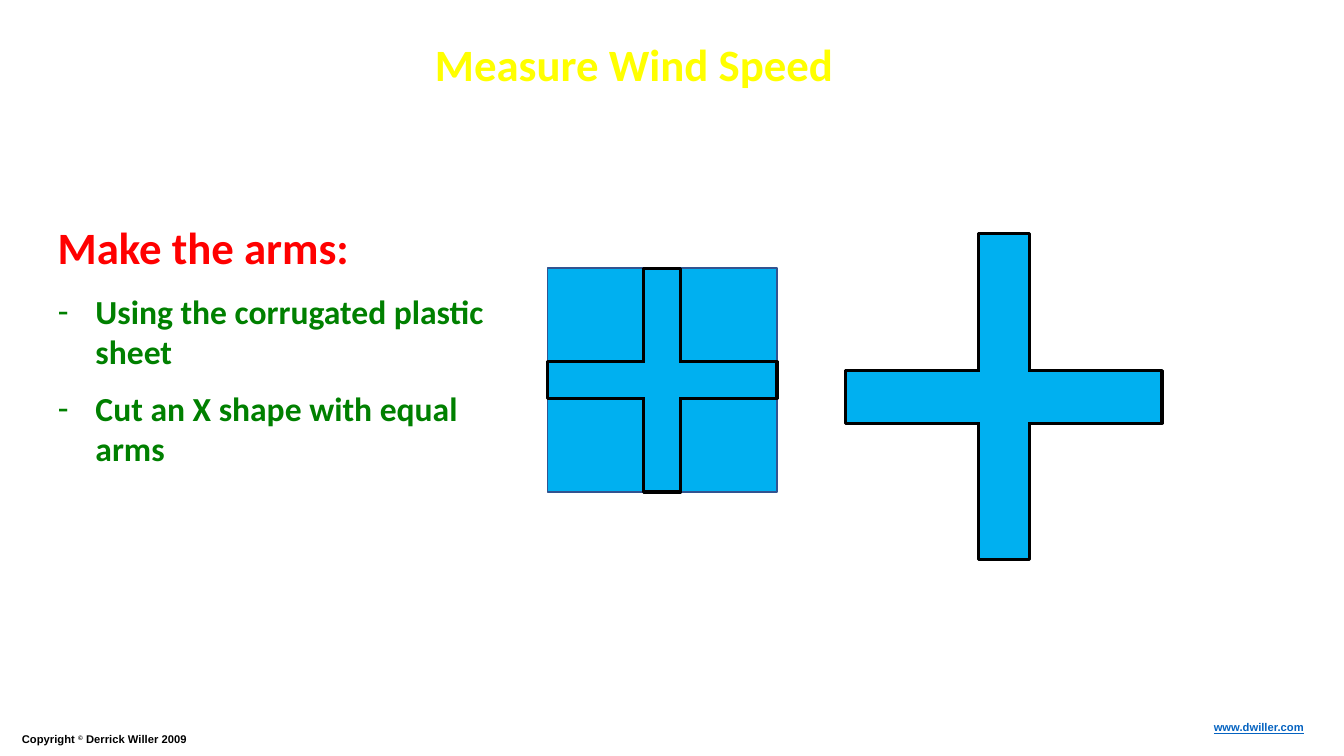
from lxml import etree
from pptx import Presentation
from pptx.dml.color import RGBColor
from pptx.enum import shapes, text
from pptx.oxml.ns import qn
from pptx.util import Pt

YELLOW = RGBColor(0xFF, 0xFF, 0x00)
RED = RGBColor(0xFF, 0x00, 0x00)
GREEN = RGBColor(0x00, 0x80, 0x00)
BLACK = RGBColor(0x00, 0x00, 0x00)
LINK = RGBColor(0x05, 0x63, 0xC1)
SHEET = RGBColor(0x00, 0xB0, 0xF0)
EDGE = RGBColor(0x32, 0x54, 0x91)
LEFT, MID, RIGHT = text.PP_ALIGN.LEFT, text.PP_ALIGN.CENTER, text.PP_ALIGN.RIGHT


def write(par, words, size=8, color=BLACK, font="Arial", align=LEFT,
          line=False, raised=False):
    par.alignment = align
    run = par.add_run()
    run.text = words
    face = run.font
    face.name, face.size, face.bold = font, Pt(size), True
    face.color.rgb = color
    if line:
        face.underline = True
    if raised:
        run._r.get_or_add_rPr().set("baseline", "30000")


def place(shape, box, wrap=True, anchor=text.MSO_ANCHOR.TOP):
    shape.left, shape.top, shape.width, shape.height = map(Pt, box)
    frame = shape.text_frame
    frame.word_wrap = wrap
    frame.auto_size = text.MSO_AUTO_SIZE.NONE
    frame.vertical_anchor = anchor
    return frame


def bullet(par, mark=None):
    """Give the paragraph a hanging mark, or none at all."""
    props = par._p.get_or_add_pPr()
    indent = Pt(27) if mark else 0
    props.set("marL", str(indent))
    props.set("indent", str(-indent))
    if mark:
        etree.SubElement(props, qn("a:buChar")).set("char", mark)
    else:
        etree.SubElement(props, qn("a:buNone"))


def title(slide, box):
    frame = place(slide.shapes.title, box, wrap=False)
    write(frame.paragraphs[0], "Measure Wind Speed", size=32, color=YELLOW,
          font="Calibri", align=MID)


def steps(slide, box):
    frame = place(slide.placeholders[1], box)
    rows = [
        ("Make the arms:", 32, RED, None),
        ("Using the corrugated plastic sheet", 24, GREEN, "-"),
        ("Cut an X shape with equal arms", 24, GREEN, "-"),
    ]
    for i, (words, size, color, mark) in enumerate(rows):
        par = frame.add_paragraph() if i else frame.paragraphs[0]
        write(par, words, size=size, color=color, font="Calibri")
        par.line_spacing = 1.0
        par.space_before = Pt(12)
        bullet(par, mark)


def footer(slide, box):
    x, y, wide, high = box
    left = place(slide.shapes.add_textbox(0, 0, 0, 0), (x, y + 8.6, 407, high))
    par = left.paragraphs[0]
    write(par, "Copyright ")
    write(par, "©", raised=True)
    write(par, " Derrick Willer 2009")
    site = 96.5
    right = place(slide.shapes.add_textbox(0, 0, 0, 0),
                  (x + wide - site, y, site, high))
    write(right.paragraphs[0], "www.dwiller.com", color=LINK, align=RIGHT,
          line=True)


def panel(group, box, color, weight):
    rect = group.shapes.add_shape(shapes.MSO_SHAPE.RECTANGLE, *map(Pt, box))
    rect.shadow.inherit = False
    rect.fill.solid()
    rect.fill.fore_color.rgb = SHEET
    rect.line.color.rgb = color
    rect.line.width = Pt(weight)


def seam(group, ends):
    line = group.shapes.add_connector(shapes.MSO_CONNECTOR.STRAIGHT,
                                      *map(Pt, ends))
    line.line.color.rgb = SHEET
    line.line.width = Pt(3)
    etree.SubElement(line._element.spPr, qn("a:effectLst"))


def cross(slide, box, post, beam, sheet=False):
    """Centre a post and a beam in the box and hide the edges where they meet."""
    x, y, wide, high = box
    group = slide.shapes.add_group_shape()
    if sheet:
        panel(group, box, EDGE, 1)
    x1, y1 = x + (wide - post) / 2, y + (high - beam) / 2
    x2, y2 = x1 + post, y1 + beam
    panel(group, (x1, y, post, high), BLACK, 2.25)
    panel(group, (x, y1, wide, beam), BLACK, 2.25)
    gap = 1
    for side in (x1, x2):
        seam(group, (side, y1 + gap, side, y2 - gap))
    for side in (y1, y2):
        seam(group, (x1 + gap, side, x2 - gap, side))


def main():
    deck = Presentation()
    deck.slide_width, deck.slide_height = Pt(960), Pt(540)
    slide = deck.slides.add_slide(deck.slide_layouts[1])
    title(slide, (298, 22.5, 310, 46))
    footer(slide, (8.6, 511.2, 930, 17))
    steps(slide, (34, 153.5, 334, 186.5))
    cross(slide, (391, 191.5, 164, 160), post=26.5, beam=26, sheet=True)
    cross(slide, (604, 167, 226, 233), post=36.5, beam=37.5)
    deck.save("out.pptx")


if __name__ == "__main__":
    main()
